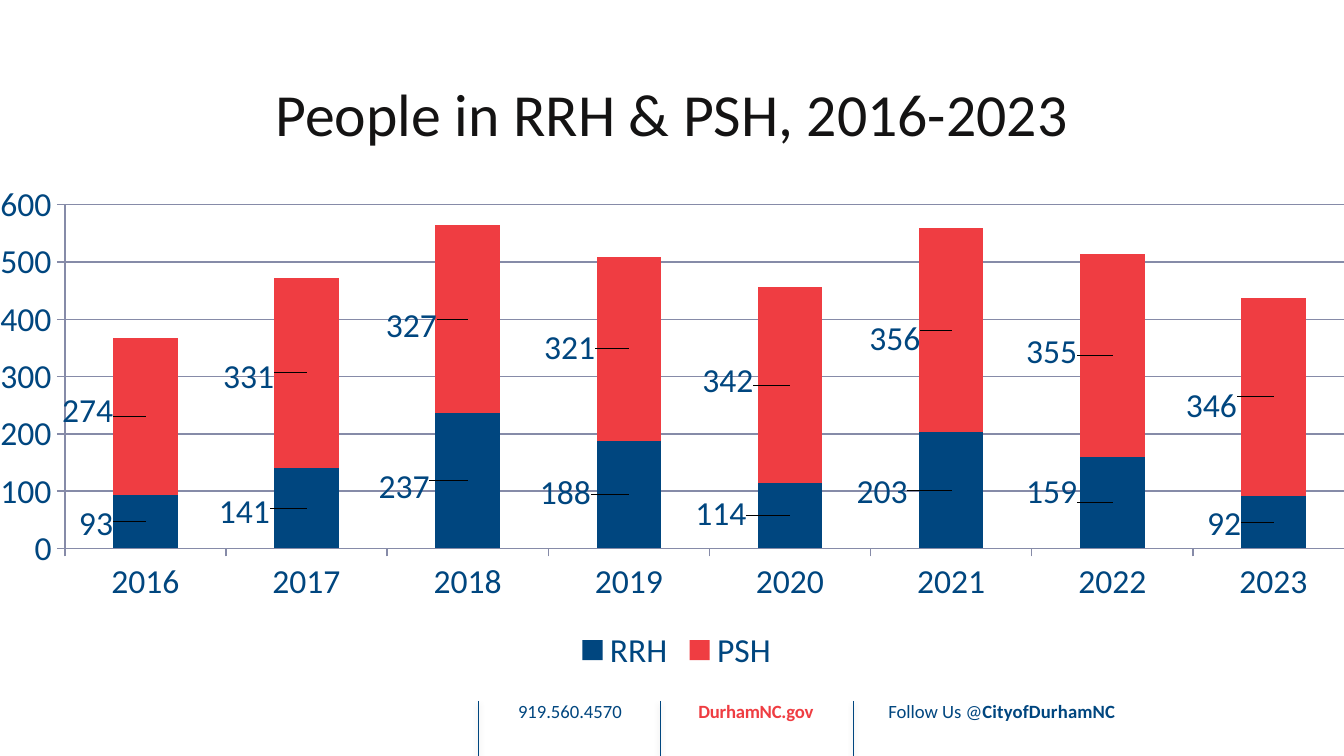
import pptx
import pptx.chart.data
import pptx.dml.color
import pptx.enum.chart
import pptx.enum.shapes
import pptx.enum.text
import pptx.oxml
import pptx.oxml.ns
import pptx.util
from dataclasses import dataclass

Inches, Pt = pptx.util.Inches, pptx.util.Pt
WIDE = 10
HIGH = WIDE * 9 / 16


@dataclass(frozen=True)
class Theme:
    font: str = "Calibri"
    navy: str = "00467F"
    red: str = "EF3D42"
    ink: str = "141313"
    grid: str = "868BA8"
    title: int = 32
    chart: int = 18
    foot: int = 10


THEME = Theme()
YEARS = [str(year) for year in range(2016, 2024)]
# Name, colour, values, label shifts from the bar centre (percent of chart)
SERIES = [
    ("RRH", THEME.navy, [93, 141, 237, 188, 114, 203, 159, 92],
     [-3.5, -4.4, -4.5, -4.5, -4.9, -4.9, -4.3, -3.5],
     [0.4, 0.6, 1.2, -0.4, -0.4, 0.2, -2.2, 0.2]),
    ("PSH", THEME.red, [274, 331, 327, 321, 342, 356, 355, 346],
     [-4.1, -4.1, -4, -4.2, -4.4, -4, -4.3, -4.4],
     [-1.2, 0.8, 1.4, -0.2, -1, 1.6, -0.8, 1.8]),
]


def rgb(code):
    return pptx.dml.color.RGBColor.from_string(code)


def place(box):
    """Turn shares of the slide into lengths."""
    left, top, width, height = box
    return (Inches(left * WIDE), Inches(top * HIGH),
            Inches(width * WIDE), Inches(height * HIGH))


def style(font, size, color, bold=False):
    font.name, font.size, font.bold = THEME.font, Pt(size), bold
    font.color.rgb = rgb(color)


def add_run(para, text, size, color, bold=False, space=0):
    run = para.add_run()
    run.text = text
    style(run.font, size, color, bold)
    if space:
        run._r.get_or_add_rPr().set("spc", str(space))


def layout(**parts):
    """Make a manual chart layout; numbers are percent of the chart."""
    inner = "".join(
        f'<c:{key} val="{part if isinstance(part, str) else part / 100}"/>'
        for key, part in parts.items())
    return pptx.oxml.parse_xml(
        f'<c:layout {pptx.oxml.ns.nsdecls("c")}>'
        f"<c:manualLayout>{inner}</c:manualLayout></c:layout>")


def hide_leads(labels):
    """Turn off the lines from moved labels to their bars."""
    root = labels._element
    for lead in root.findall(pptx.oxml.ns.qn("c:showLeaderLines")):
        root.remove(lead)
    root.append(pptx.oxml.parse_xml(
        f'<c:extLst {pptx.oxml.ns.nsdecls("c")}>'
        '<c:ext uri="{CE6537A1-D6FC-4f65-9D91-7224C49458BB}" xmlns:c15='
        '"http://schemas.microsoft.com/office/drawing/2012/chart">'
        '<c15:showLeaderLines val="0"/></c:ext></c:extLst>'))


def add_title(slide, box):
    title = slide.shapes.title
    title.left, title.top, title.width, title.height = place(box)
    frame = title.text_frame
    frame.vertical_anchor = pptx.enum.text.MSO_ANCHOR.MIDDLE
    para = frame.paragraphs[0]
    para.alignment = pptx.enum.text.PP_ALIGN.CENTER
    add_run(para, "People in RRH & PSH, 2016-2023", THEME.title, THEME.ink)


def add_bars(slide, box):
    data = pptx.chart.data.CategoryChartData()
    data.categories = YEARS
    for name, _, values, *_ in SERIES:
        data.add_series(name, values)
    kind = pptx.enum.chart.XL_CHART_TYPE.COLUMN_STACKED
    chart = slide.shapes.add_chart(kind, *place(box), data).chart
    chart.has_title = False
    style(chart.font, THEME.chart, THEME.navy)

    # Legend and plot area
    chart.has_legend = True
    chart.legend.position = pptx.enum.chart.XL_LEGEND_POSITION.BOTTOM
    chart.legend.include_in_layout = False
    area = chart._chartSpace.chart.plotArea
    for old in area.findall(pptx.oxml.ns.qn("c:layout")):
        area.remove(old)
    area.insert(0, layout(layoutTarget="inner", xMode="edge", yMode="edge",
                          x=6.6, y=6, w=91.45, h=68.4))

    # Axes
    axis = chart.value_axis
    axis.minimum_scale, axis.maximum_scale, axis.major_unit = 0, 600, 100
    axis.has_major_gridlines = True
    for part in (axis, chart.category_axis):
        part.major_tick_mark = pptx.enum.chart.XL_TICK_MARK.OUTSIDE
    for line in (axis.format.line, chart.category_axis.format.line,
                 axis.major_gridlines.format.line):
        line.color.rgb, line.width = rgb(THEME.grid), Pt(0.75)

    # Bars, with labels moved to their left
    plot = chart.plots[0]
    plot.gap_width, plot.overlap = 150, 100
    plot.vary_by_categories = False
    for bars, (_, color, _, across, down) in zip(plot.series, SERIES):
        bars.format.fill.solid()
        bars.format.fill.fore_color.rgb = rgb(color)
        bars.data_labels.show_value = True
        style(bars.data_labels.font, THEME.chart, THEME.navy)
        for i, (x, y) in enumerate(zip(across, down)):
            label = bars.points[i].data_label
            style(label.font, THEME.chart, THEME.navy)
            label._get_or_add_dLbl().insert(1, layout(x=x, y=y))
        hide_leads(bars.data_labels)


def add_rule(slide, x, top):
    line = slide.shapes.add_connector(
        pptx.enum.shapes.MSO_CONNECTOR.STRAIGHT,
        Inches(x * WIDE), Inches(top * HIGH), Inches(x * WIDE), Inches(HIGH))
    line.line.color.rgb, line.line.width = rgb(THEME.navy), Pt(0.25)
    line._element.spPr.append(pptx.oxml.parse_xml(
        f'<a:effectLst {pptx.oxml.ns.nsdecls("a")}>'
        '<a:outerShdw blurRad="40000" dist="20000" dir="5400000" '
        'rotWithShape="0"><a:srgbClr val="000000"><a:alpha val="38000"/>'
        "</a:srgbClr></a:outerShdw></a:effectLst>"))


def add_foot(slide, box):
    left, top, width, height = box
    align = pptx.enum.text.PP_ALIGN
    navy, red = THEME.navy, THEME.red
    # Rule, text start and text width in inches; alignment; runs
    cells = [
        (3.56, 3.82, 0.84, align.CENTER, [("919.560.4570", navy, False, 0)]),
        (4.91, 5.16, 0.93, align.CENTER, [("DurhamNC.gov", red, True, -10)]),
        (6.35, 6.61, 2, align.LEFT, [("Follow Us ", navy, False, 0),
                                     ("@", navy, False, 10),
                                     ("CityofDurhamNC", navy, True, 10)]),
    ]
    for rule, start, span, side, runs in cells:
        add_rule(slide, left + width * rule / WIDE, top + 0.01)
        spot = (left + width * start / WIDE, top, width * span / WIDE, height)
        frame = slide.shapes.add_textbox(*place(spot)).text_frame
        frame.word_wrap = True
        frame.margin_left = frame.margin_right = 0
        para = frame.paragraphs[0]
        para.alignment = side
        for text, color, bold, space in runs:
            add_run(para, text, THEME.foot, color, bold, space)


def main():
    deck = pptx.Presentation()
    deck.slide_width, deck.slide_height = Inches(WIDE), Inches(HIGH)
    slide = deck.slides.add_slide(deck.slide_layouts[5])
    add_foot(slide, (0, 0.917, 1, 0.045))
    add_title(slide, (0.075, 0, 0.85, 0.298))
    add_bars(slide, (-0.021, 0.231, 1.049, 0.665))
    deck.save("out.pptx")


if __name__ == "__main__":
    main()
